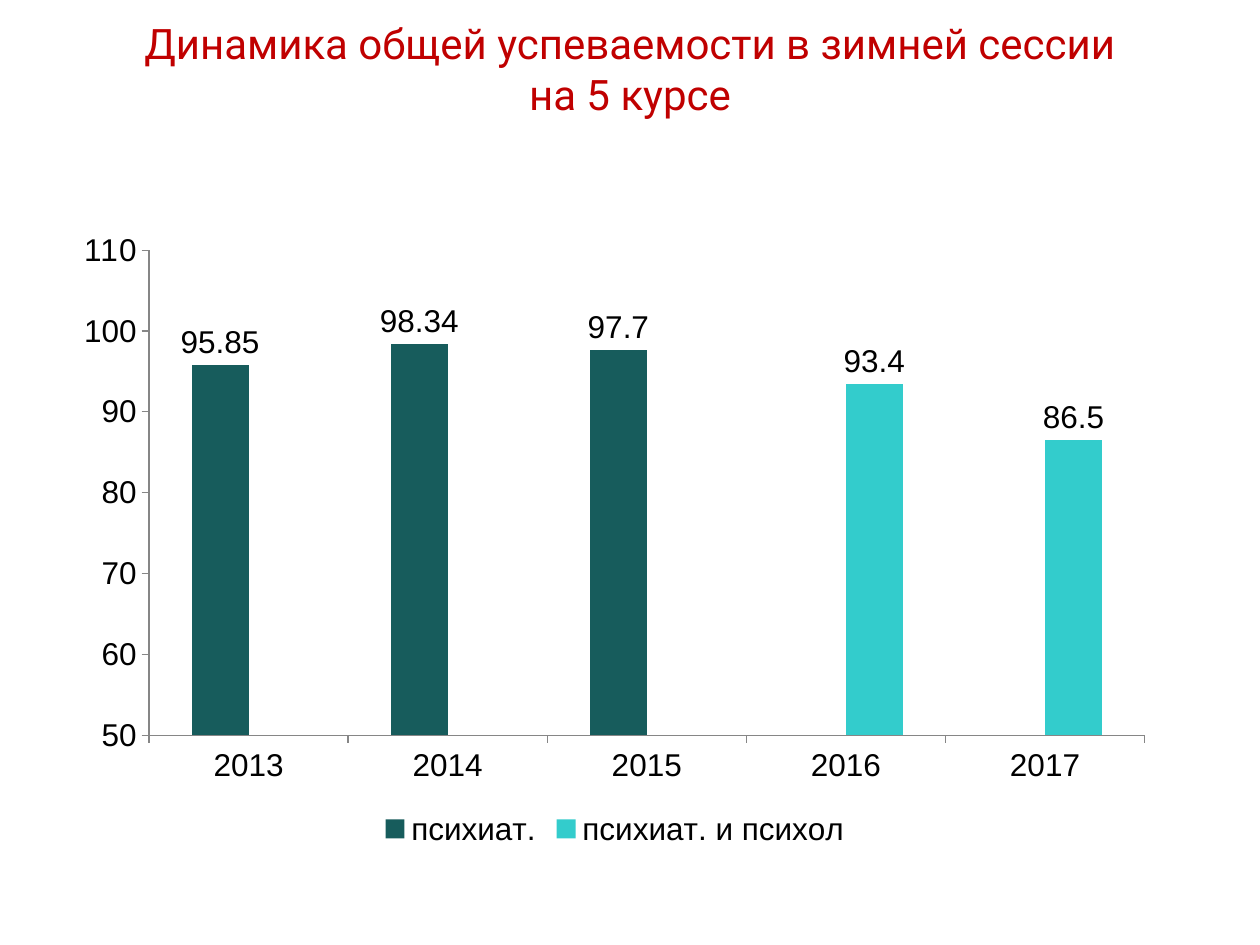
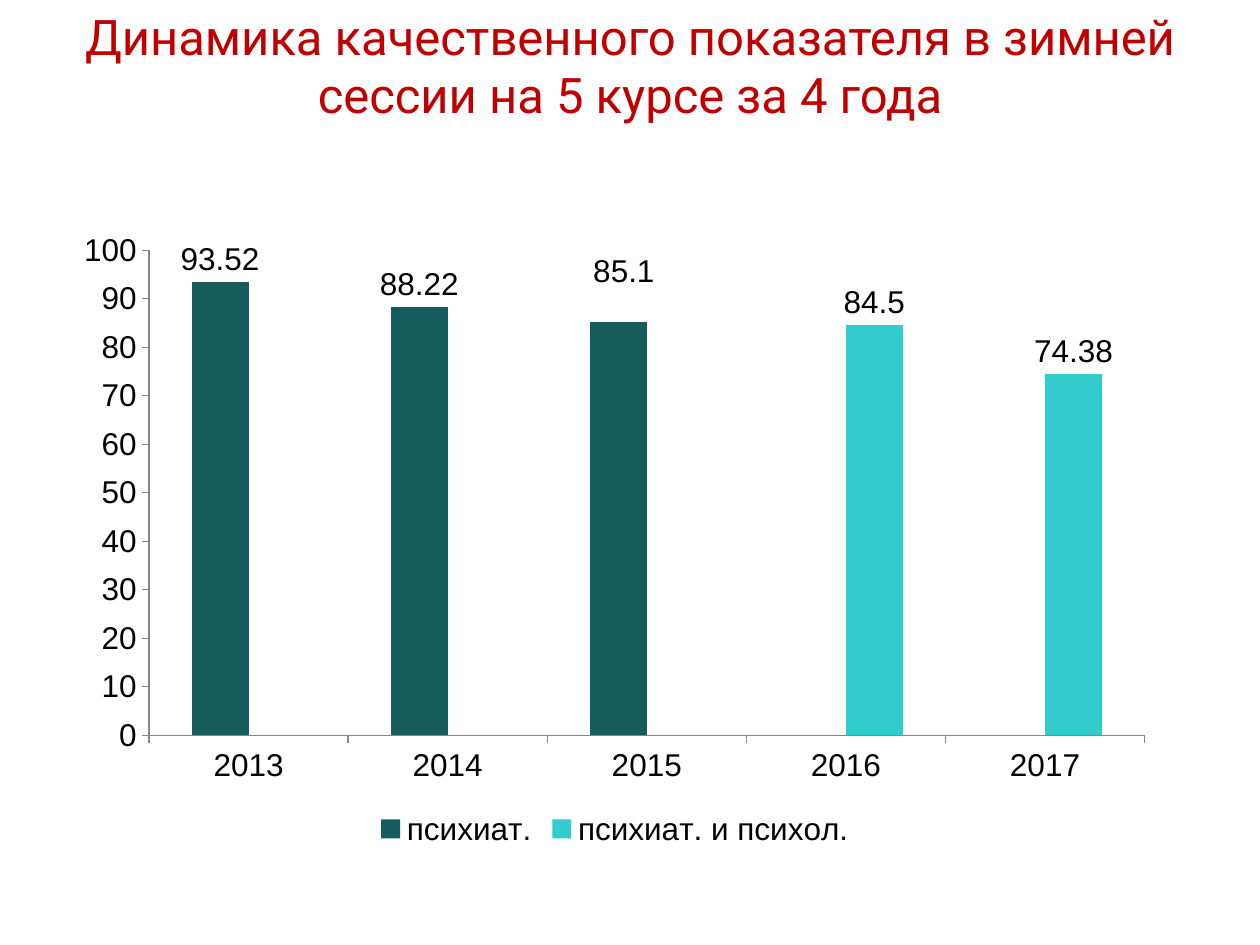
from dataclasses import dataclass

from lxml import etree
from pptx import Presentation
from pptx.chart.data import CategoryChartData
from pptx.dml.color import RGBColor
from pptx.enum.chart import XL_CHART_TYPE, XL_LABEL_POSITION, XL_LEGEND_POSITION, XL_TICK_MARK
from pptx.enum.text import MSO_ANCHOR, MSO_AUTO_SIZE, PP_ALIGN
from pptx.oxml.ns import qn
from pptx.util import Inches, Pt

YEARS = ["2013", "2014", "2015", "2016", "2017"]
SLIDES = [
    {
        "title": "Динамика общей успеваемости в зимней сессии\vна 5 курсе",
        "title_size": 24, "title_top": 0, "title_height": 1.08,
        "axis": (50, 110),
        "series": [
            ("психиат.", [95.85, 98.34, 97.7, None, None]),
            ("психиат. и психол", [None, None, None, 93.4, 86.5]),
        ],
        "moved_labels": [],
    },
    {
        "title": "Динамика качественного показателя в зимней сессии на 5 курсе за 4 года",
        "title_size": 28, "title_top": 0.08, "title_height": 0.87,
        "axis": (0, 100),
        "series": [
            ("психиат.", [93.52, 88.22, 85.1, None, None]),
            ("психиат. и психол.", [None, None, None, 84.5, 74.38]),
        ],
        "moved_labels": [(0, 2, {"x": 0.005, "y": -0.045})],
    },
]
PLOT_AREA = {"layoutTarget": "inner", "xMode": "edge", "yMode": "edge",
             "x": 0.078, "y": 0.047, "w": 0.902, "h": 0.767}
COLUMNS = XL_CHART_TYPE.COLUMN_CLUSTERED
LEGEND_BOTTOM = XL_LEGEND_POSITION.BOTTOM
OUTSIDE_END = XL_LABEL_POSITION.OUTSIDE_END
TICK_OUT, TICK_NONE = XL_TICK_MARK.OUTSIDE, XL_TICK_MARK.NONE
NO_AUTOFIT, MIDDLE, CENTER = MSO_AUTO_SIZE.NONE, MSO_ANCHOR.MIDDLE, PP_ALIGN.CENTER


@dataclass(frozen=True)
class Theme:
    title = RGBColor.from_string("C00000")
    text = RGBColor.from_string("000000")
    axis = RGBColor.from_string("868686")
    bars = (RGBColor.from_string("175C5C"), RGBColor.from_string("33CCCC"))
    title_font = "Roboto"
    chart_font = "Arial"
    chart_size = Pt(18)


def set_layout(parent, position, index):
    for old in parent.findall(qn("c:layout")):
        parent.remove(old)
    layout = etree.Element(qn("c:layout"))
    manual = etree.SubElement(layout, qn("c:manualLayout"))
    for name, value in position.items():
        etree.SubElement(manual, qn(f"c:{name}")).set("val", str(value))
    parent.insert(index, layout)


def hide_leader_lines(labels):
    for old in labels.findall(qn("c:showLeaderLines")):
        labels.remove(old)
    etree.SubElement(labels, qn("c:showLeaderLines")).set("val", "0")


def set_title(s, content):
    sp = s.shapes.title
    sp.left, sp.top = Inches(0.5), Inches(content["title_top"])
    sp.width, sp.height = Inches(9), Inches(content["title_height"])
    tf = sp.text_frame
    tf.text = content["title"]
    tf.auto_size = NO_AUTOFIT
    tf.word_wrap = True
    tf.vertical_anchor = MIDDLE
    p = tf.paragraphs[0]
    p.alignment = CENTER
    for r in p.runs:
        r.font.name = Theme.title_font
        r.font.size = Pt(content["title_size"])
        r.font.color.rgb = Theme.title


def add_results_chart(s, content):
    data = CategoryChartData()
    data.categories = YEARS
    for name, values in content["series"]:
        data.add_series(name, values)
    chart = s.shapes.add_chart(COLUMNS, Inches(0.5), Inches(1.75),
                               Inches(8.76), Inches(5.02), data).chart
    chart.has_title = False
    chart.font.name = Theme.chart_font
    chart.font.size = Theme.chart_size
    chart.font.color.rgb = Theme.text
    chart.has_legend = True
    chart.legend.position = LEGEND_BOTTOM
    chart.legend.include_in_layout = False

    for axis in (chart.category_axis, chart.value_axis):
        axis.major_tick_mark = TICK_OUT
        axis.minor_tick_mark = TICK_NONE
        axis.has_major_gridlines = False
        axis.format.line.color.rgb = Theme.axis
        axis.format.line.width = Pt(0.75)
    axis = chart.value_axis
    axis.minimum_scale, axis.maximum_scale = content["axis"]
    axis.major_unit = 10

    plot = chart.plots[0]
    plot.gap_width = 150
    plot.overlap = 0
    plot.vary_by_categories = False
    for series, color in zip(plot.series, Theme.bars):
        series.format.fill.solid()
        series.format.fill.fore_color.rgb = color
        series.data_labels.show_value = True
        series.data_labels.position = OUTSIDE_END
        hide_leader_lines(series.data_labels._element)
    for series_index, point_index, offset in content["moved_labels"]:
        series = plot.series[series_index]
        series.points[point_index].data_label.position = OUTSIDE_END
        label = series.data_labels._element.find(qn("c:dLbl"))
        set_layout(label, offset, 1)
    set_layout(chart._chartSpace.chart.plotArea, PLOT_AREA, 0)


def main():
    prs = Presentation()
    prs.slide_width, prs.slide_height = Inches(10), Inches(7.5)
    for content in SLIDES:
        s = prs.slides.add_slide(prs.slide_layouts[5])
        set_title(s, content)
        add_results_chart(s, content)
    prs.save("out.pptx")


if __name__ == "__main__":
    main()
